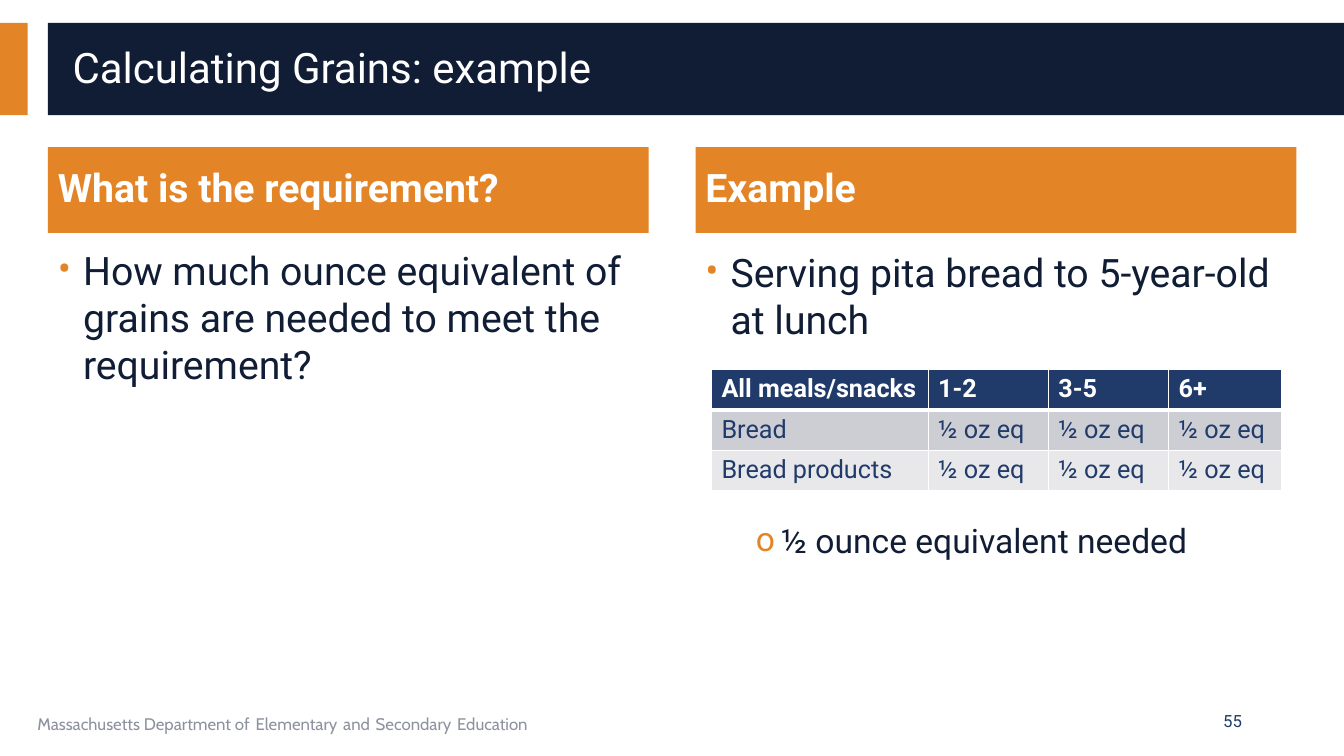
import pptx
import pptx.util
import pptx.dml.color
import pptx.enum.shapes
import pptx.enum.text
import pptx.oxml
import pptx.oxml.ns

Cm = pptx.util.Cm
Pt = pptx.util.Pt
ANCHOR = pptx.enum.text.MSO_ANCHOR
COLOURS = {
    "orange": "E38526",
    "navy": "101D35",
    "blue": "203B6A",
    "grey": "8D92A1",
    "white": "FFFFFF",
    "band": "CDCED4",
    "pale": "E8E8EB",
}
RGB = {name: pptx.dml.color.RGBColor.from_string(value) for name, value in COLOURS.items()}
NAMESPACE = pptx.oxml.ns.nsdecls("a")


def add_span(para, text, size, colour, bold=False, face="Roboto"):
    span = para.add_run()
    span.text = text
    span.font.size = Pt(size)
    span.font.name = face
    span.font.bold = bold
    span.font.color.rgb = RGB[colour]


def add_bullet(para, mark, margin):
    properties = para._p.get_or_add_pPr()
    properties.set("marL", str(Cm(margin)))
    properties.set("indent", str(-Cm(0.635)))
    for element in (
        f'<a:buClr {NAMESPACE}><a:srgbClr val="{COLOURS["orange"]}"/></a:buClr>',
        f'<a:buFont {NAMESPACE} typeface="Roboto"/>',
        f'<a:buChar {NAMESPACE} char="{mark}"/>',
    ):
        properties.append(pptx.oxml.parse_xml(element))


deck = pptx.Presentation()
deck.slide_width = Cm(33.87)
deck.slide_height = Cm(19.05)
page = deck.slides.add_slide(deck.slide_layouts[6])

column_lefts = (1.21, 17.53)
column_width = 15.14

panels = [
    (0, 0.58, 0.7, 2.32, "orange", ""),
    (column_lefts[0], 0.58, 32.66, 2.32, "navy", ""),
    (column_lefts[0], 3.71, column_width, 2.16, "orange", "What is the requirement?"),
    (column_lefts[1], 3.71, column_width, 2.16, "orange", "Example"),
]
for left, top, width, height, colour, heading in panels:
    panel = page.shapes.add_shape(
        pptx.enum.shapes.MSO_SHAPE.RECTANGLE, Cm(left), Cm(top), Cm(width), Cm(height)
    )
    panel.shadow.inherit = False
    panel.fill.solid()
    panel.fill.fore_color.rgb = RGB[colour]
    panel.line.fill.background()
    if heading:
        panel.text_frame.vertical_anchor = ANCHOR.MIDDLE
        para = panel.text_frame.paragraphs[0]
        para.alignment = pptx.enum.text.PP_ALIGN.LEFT
        para.line_spacing = 0.9
        add_span(para, heading, 28, "white", bold=True)

title = page.shapes.add_textbox(Cm(1.58), Cm(0.81), Cm(31.75), Cm(1.88))
title.text_frame.word_wrap = True
title.text_frame.vertical_anchor = ANCHOR.MIDDLE
para = title.text_frame.paragraphs[0]
para.line_spacing = 0.9
add_span(para, "Calculating Grains: example", 30, "white")

bodies = [
    (6.07, "How much ounce equivalent of grains are needed to meet the requirement?", ""),
    (6.12, "Serving pita bread to 5-year-old at lunch", "½ ounce equivalent needed"),
]
for left, (top, point, answer) in zip(column_lefts, bodies):
    body = page.shapes.add_textbox(Cm(left), Cm(top), Cm(column_width), Cm(10.54))
    body.text_frame.word_wrap = True
    para = body.text_frame.paragraphs[0]
    add_bullet(para, "•", 0.635)
    add_span(para, point, 28, "navy")
    if answer:
        para = body.text_frame.add_paragraph()
        para.level = 1
        add_bullet(para, "o", 1.905)
        para.space_before = Pt(127)
        add_span(para, answer, 24, "navy")

rows = [
    ["All meals/snacks", "1-2", "3-5", "6+"],
    ["Bread"] + ["½ oz eq"] * 3,
    ["Bread products"] + ["½ oz eq"] * 3,
]
row_fills = ["blue", "band", "pale"]
column_widths = [5.46, 3.03, 3.03, 2.85]
grains = page.shapes.add_table(
    len(rows), len(column_widths), Cm(17.93), Cm(9.3), Cm(sum(column_widths)), Cm(3.07)
).table
for column, width in zip(grains.columns, column_widths):
    column.width = Cm(width)
for row_index, (words, fill) in enumerate(zip(rows, row_fills)):
    header = row_index == 0
    for column_index, word in enumerate(words):
        cell = grains.cell(row_index, column_index)
        cell.fill.solid()
        cell.fill.fore_color.rgb = RGB[fill]
        add_span(cell.text_frame.paragraphs[0], word, 18, "white" if header else "blue", header)
        thickness = {"lnL": 1, "lnR": 1, "lnT": 3 if row_index == 1 else 1, "lnB": 3 if header else 1}
        for position, (side, points) in enumerate(thickness.items()):
            border = pptx.oxml.parse_xml(
                f'<a:{side} {NAMESPACE} w="{Pt(points)}"><a:solidFill>'
                f'<a:srgbClr val="{COLOURS["white"]}"/></a:solidFill></a:{side}>'
            )
            cell._tc.get_or_add_tcPr().insert(position, border)

footer = page.shapes.add_textbox(Cm(0.69), Cm(17.65), Cm(21.44), Cm(1.02))
footer.text_frame.word_wrap = True
para = footer.text_frame.paragraphs[0]
for index, words in enumerate(["Massachusetts Department of", "Elementary", "and", "Secondary", "Education"]):
    if index:
        add_span(para, " ", 18, "blue", face="Cabin")
    add_span(para, words, 12, "grey", face="Cabin")

number = page.shapes.add_textbox(Cm(23.93), Cm(17.65), Cm(7.62), Cm(1.02))
number.text_frame.word_wrap = True
number.text_frame.vertical_anchor = ANCHOR.MIDDLE
para = number.text_frame.paragraphs[0]
para.alignment = pptx.enum.text.PP_ALIGN.RIGHT
add_span(para, "55", 12, "blue")

deck.save("out.pptx")
